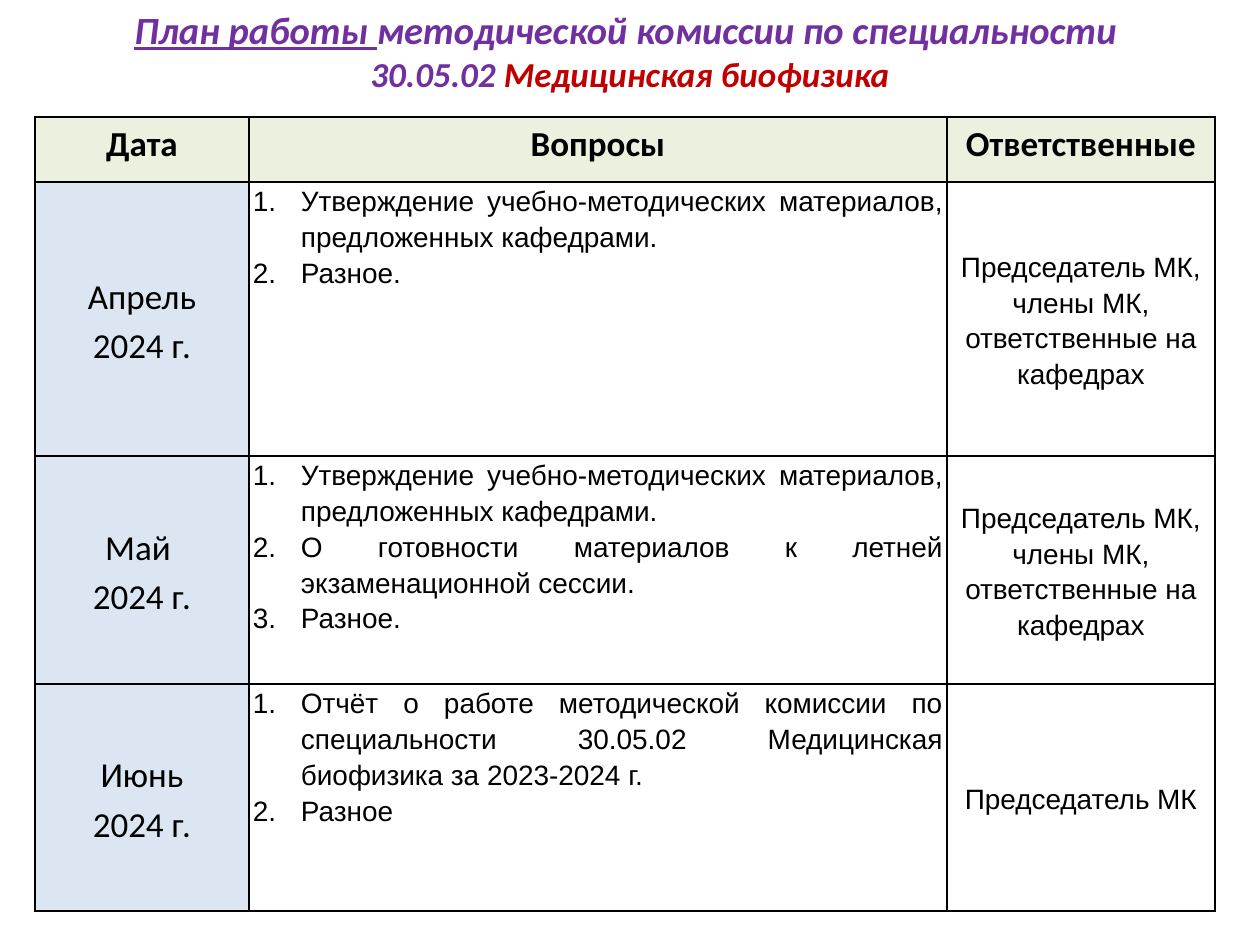
"""Build the work plan slide of the methodical commission for April to June 2024."""
from lxml.etree import SubElement
from pptx import Presentation
from pptx.dml.color import RGBColor
from pptx.enum.text import MSO_ANCHOR, PP_ALIGN
from pptx.oxml.ns import qn
from pptx.util import Emu, Pt


def px(length):
    return Emu(round(length * 914400 / 126))


def write(paragraph, text, size=20, font="Calibri", color="000000", bold=False,
          italic=False, underline=False, align=PP_ALIGN.CENTER, spacing=None):
    paragraph.alignment = align
    if spacing:
        paragraph.line_spacing = spacing
    run = paragraph.add_run()
    run.text = text
    run.font.size, run.font.name = Pt(size), font
    run.font.bold, run.font.italic, run.font.underline = bold, italic, underline
    run.font.color.rgb = RGBColor.from_string(color)


presentation = Presentation()
presentation.slide_width, presentation.slide_height = px(1260), px(945)
slide = presentation.slides.add_slide(presentation.slide_layouts[6])

heading = slide.shapes.add_textbox(0, 0, px(1260), px(102)).text_frame
heading.word_wrap = True
emphasis = {"bold": True, "italic": True}
subject = heading.paragraphs[0]
write(subject, "План работы ", size=22, color="7030A0", underline=True, **emphasis)
write(subject, "методической комиссии по специальности ", size=22, color="7030A0", **emphasis)
specialty = heading.add_paragraph()
write(specialty, "30.05.02 ", color="7030A0", **emphasis)
write(specialty, "Медицинская биофизика", color="C00000", **emphasis)

approval = "Утверждение учебно-методических материалов, предложенных кафедрами."
everyone = ["Председатель МК,", "члены МК,", "ответственные на кафедрах"]
plan = [
    [["Дата"], ["Вопросы"], ["Ответственные"]],
    [["Апрель", "2024 г."], [approval, "Разное."], everyone],
    [["Май ", "2024 г."],
     [approval, "О готовности материалов к летней экзаменационной сессии.", "Разное."],
     everyone],
    [["Июнь", "2024 г."],
     ["Отчёт о работе методической комиссии по специальности 30.05.02 "
      "Медицинская биофизика за 2023-2024 г.", "Разное"],
     ["Председатель МК"]],
]
widths = [214, 698, 268]
heights = [65, 274, 228, 227]

schedule = slide.shapes.add_table(len(heights), len(widths), px(35), px(117),
                                  px(sum(widths)), px(sum(heights))).table
schedule.first_row = schedule.horz_banding = False
for column, width in zip(schedule.columns, widths):
    column.width = px(width)
for row, height in zip(schedule.rows, heights):
    row.height = px(height)

for r, entries in enumerate(plan):
    for c, lines in enumerate(entries):
        header, questions = r == 0, r > 0 and c == 1
        cell = schedule.cell(r, c)
        cell.margin_left = cell.margin_right = px(4)
        cell.margin_top = cell.margin_bottom = 0
        cell.vertical_anchor = MSO_ANCHOR.TOP if header or questions else MSO_ANCHOR.MIDDLE
        properties = cell._tc.get_or_add_tcPr()
        for side in ("a:lnL", "a:lnR", "a:lnT", "a:lnB"):
            border = SubElement(properties, qn(side), w=str(Pt(1)))
            SubElement(SubElement(border, qn("a:solidFill")), qn("a:srgbClr"), val="000000")
        cell.fill.solid()
        cell.fill.fore_color.rgb = RGBColor.from_string(
            "EBF1DE" if header else "DCE6F2" if c == 0 else "FFFFFF")
        body = {} if header or c == 0 else {"size": 16, "font": "Arial"}
        for i, line in enumerate(lines):
            paragraph = cell.text_frame.add_paragraph() if i else cell.text_frame.paragraphs[0]
            if questions:
                numbering = paragraph._p.get_or_add_pPr()
                numbering.set("marL", str(px(48)))
                numbering.set("indent", str(-px(48)))
                SubElement(numbering, qn("a:buAutoNum"), type="arabicPeriod")
            write(paragraph, line, bold=header, spacing=1.15,
                  align=PP_ALIGN.JUSTIFY if questions else PP_ALIGN.CENTER, **body)

presentation.save("out.pptx")
